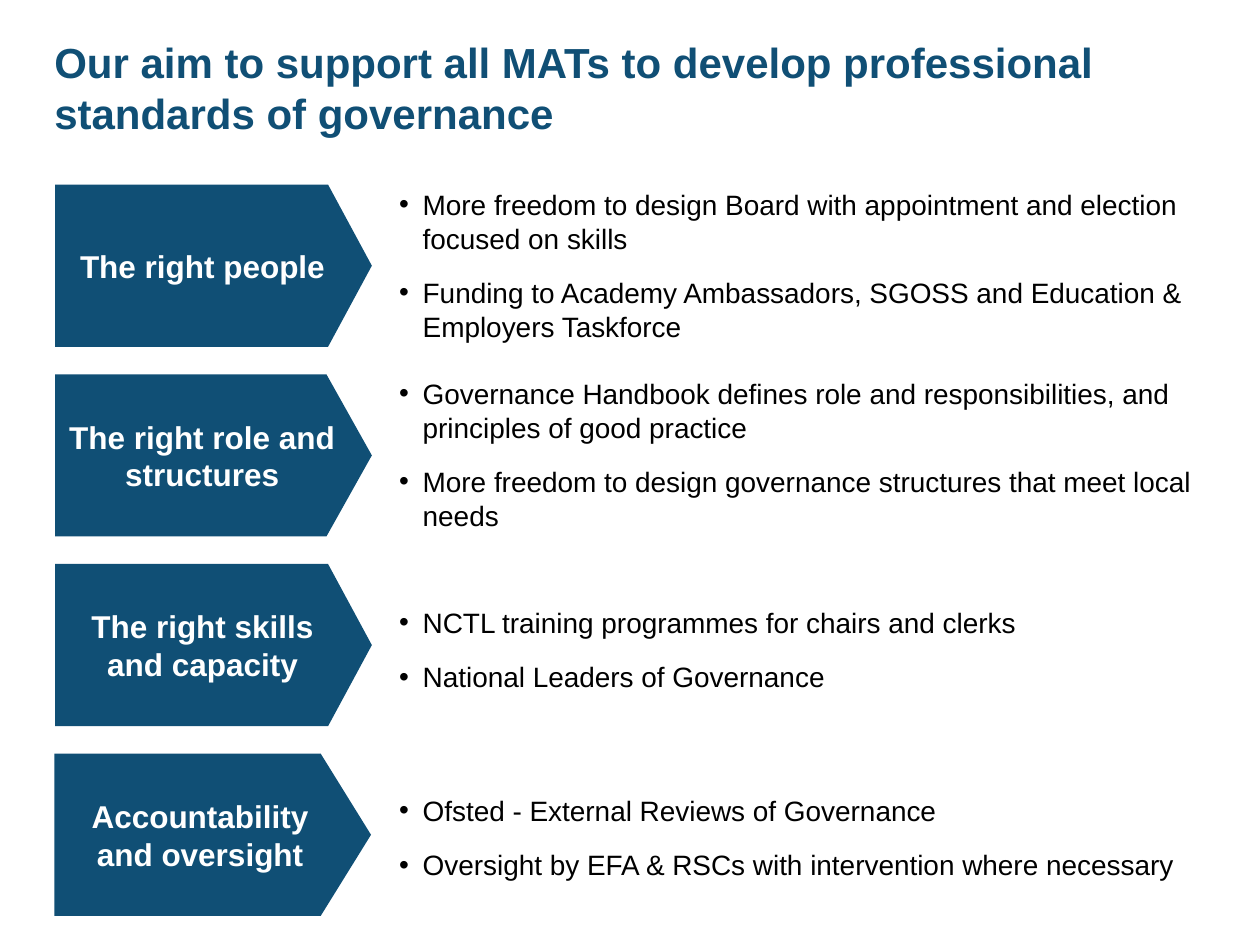
from dataclasses import dataclass

from lxml.etree import SubElement
from pptx import Presentation
from pptx.dml.color import RGBColor
from pptx.enum.shapes import MSO_SHAPE as Shape
from pptx.enum.text import MSO_ANCHOR as Anchor, PP_ALIGN as Align
from pptx.oxml.ns import qn
from pptx.slide import Slide
from pptx.text.text import TextFrame
from pptx.util import Pt

NAVY = RGBColor(0x10, 0x4F, 0x75)
WHITE = RGBColor(0xFF, 0xFF, 0xFF)
BLACK = RGBColor(0x00, 0x00, 0x00)
FONT = "Arial"

FIRST_ARROW_TOP = 105.5
ROW_PITCH = 108.4
ARROW_WIDTH, ARROW_HEIGHT = 181, 92.7
POINTS_LEFT, POINTS_HEIGHT = 221, 100
BULLET_INDENT = 13.5


@dataclass(frozen=True)
class Theme:
    label: str
    points: tuple[str, ...]
    points_top: float
    points_width: float = 484
    arrow_left: float = 31.5
    arrow_tip: float = 0.27


THEMES = (
    Theme("The right people", (
        "More freedom to design Board with appointment and election focused on skills",
        "Funding to Academy Ambassadors, SGOSS and Education & Employers Taskforce",
    ), 101.5, points_width=496),
    Theme("The right role and structures", (
        "Governance Handbook defines role and responsibilities, and principles of good practice",
        "More freedom to design governance structures that meet local needs",
    ), 209.5, arrow_tip=0.28),
    Theme("The right skills and capacity", (
        "NCTL training programmes for chairs and clerks",
        "National Leaders of Governance",
    ), 321),
    Theme("Accountability and oversight", (
        "Ofsted - External Reviews of Governance",
        "Oversight by EFA & RSCs with intervention where necessary",
    ), 428.5, arrow_left=31, arrow_tip=0.31),
)


def write_text(frame: TextFrame, *texts: str, size: float, color: RGBColor,
               bold: bool = False, align: Align = Align.LEFT,
               anchor: Anchor = Anchor.MIDDLE, bulleted: bool = False,
               space_after: float = 0) -> None:
    frame.word_wrap = True
    frame.vertical_anchor = anchor
    for index, text in enumerate(texts):
        paragraph = frame.add_paragraph() if index else frame.paragraphs[0]
        paragraph.alignment = align
        paragraph.space_after = Pt(space_after)
        if bulleted:
            properties = paragraph._p.get_or_add_pPr()
            properties.set("marL", str(Pt(BULLET_INDENT)))
            properties.set("indent", str(-Pt(BULLET_INDENT)))
            SubElement(properties, qn("a:buFont"), typeface=FONT)
            SubElement(properties, qn("a:buChar"), char="•")
        run = paragraph.add_run()
        run.text = text
        run.font.name = FONT
        run.font.size = Pt(size)
        run.font.bold = bold
        run.font.color.rgb = color


def add_title(slide: Slide, text: str) -> None:
    box = slide.shapes.add_textbox(Pt(31), Pt(21), Pt(686), Pt(58))
    frame = box.text_frame
    frame.margin_left = frame.margin_right = 0
    frame.margin_top = frame.margin_bottom = 0
    write_text(frame, text, size=24, color=NAVY, bold=True, anchor=Anchor.TOP)


def add_theme(slide: Slide, theme: Theme, arrow_top: float) -> None:
    arrow = slide.shapes.add_shape(
        Shape.PENTAGON, Pt(theme.arrow_left), Pt(arrow_top),
        Pt(ARROW_WIDTH), Pt(ARROW_HEIGHT))
    arrow.adjustments[0] = theme.arrow_tip
    arrow.shadow.inherit = False
    arrow.fill.solid()
    arrow.fill.fore_color.rgb = NAVY
    arrow.line.fill.background()
    write_text(arrow.text_frame, theme.label, size=18, color=WHITE,
               bold=True, align=Align.CENTER)

    box = slide.shapes.add_textbox(
        Pt(POINTS_LEFT), Pt(theme.points_top),
        Pt(theme.points_width), Pt(POINTS_HEIGHT))
    write_text(box.text_frame, *theme.points, size=16, color=BLACK,
               bulleted=True, space_after=12)


def main() -> None:
    presentation = Presentation()
    presentation.slide_width = Pt(720)
    presentation.slide_height = Pt(540)
    slide = presentation.slides.add_slide(presentation.slide_layouts[6])
    add_title(slide, "Our aim to support all MATs to develop professional standards of governance")
    for row, theme in enumerate(THEMES):
        add_theme(slide, theme, FIRST_ARROW_TOP + row * ROW_PITCH)
    presentation.save("out.pptx")


if __name__ == "__main__":
    main()
